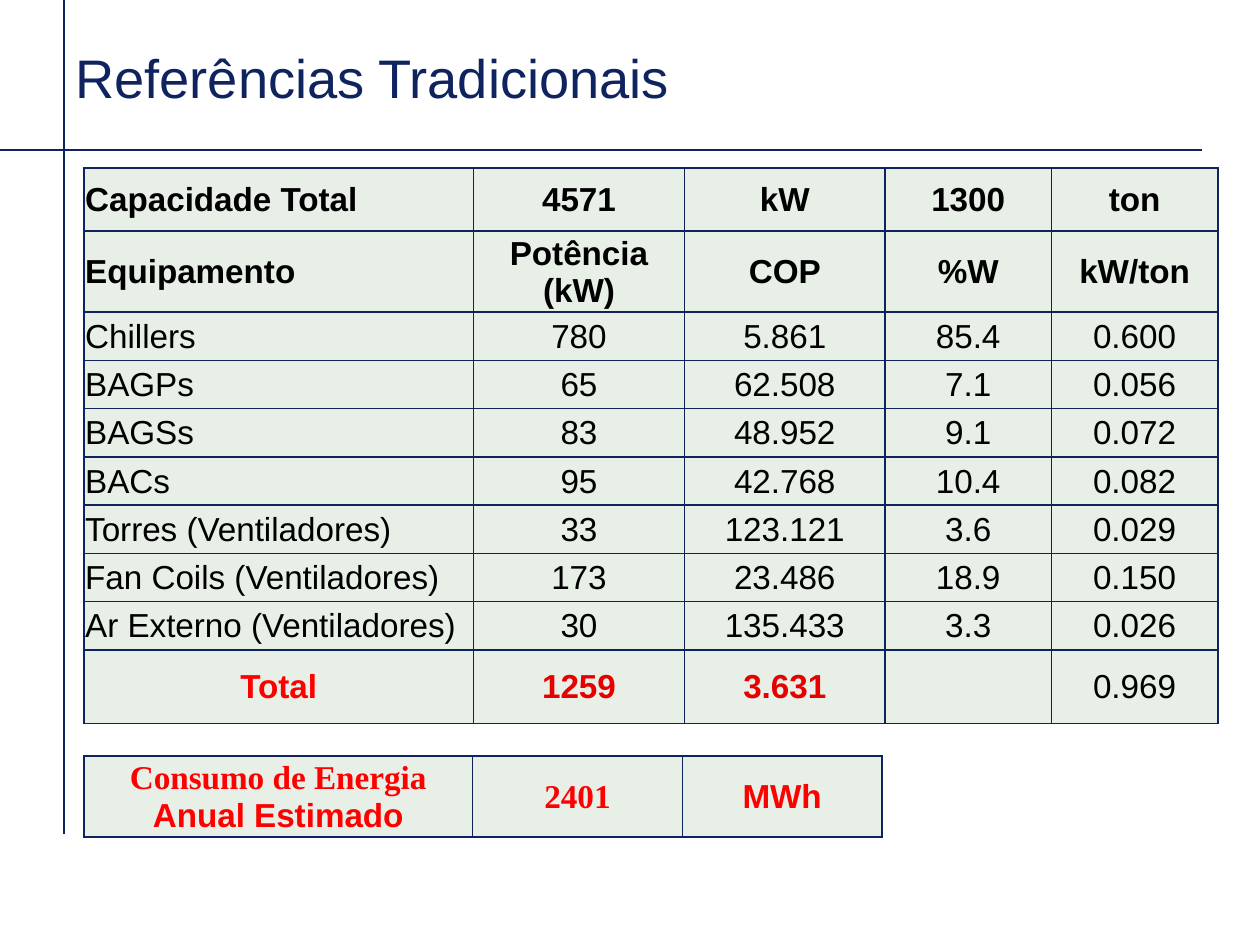
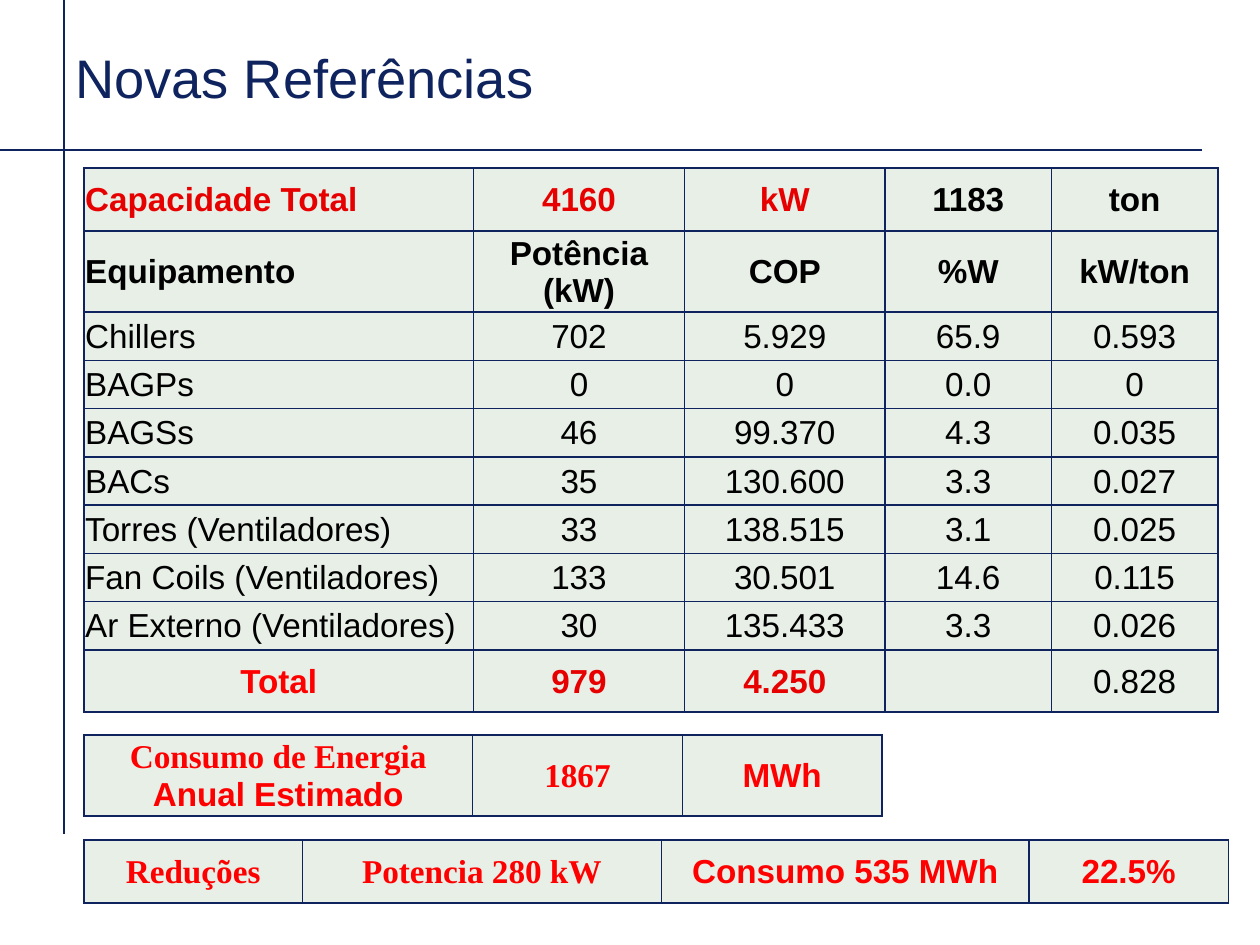
import dataclasses
import itertools

import pptx
import pptx.dml.color
import pptx.enum.shapes
import pptx.enum.text
import pptx.oxml
import pptx.oxml.ns
import pptx.util

NAVY, MINT, BLACK = "0F245F", "E7EFE7", "000000"
RED, DARK_RED = "FF0000", "E70000"
SANS, SERIF = "Arial", "Times New Roman"
ALIGN = pptx.enum.text.PP_ALIGN
ANCHOR = pptx.enum.text.MSO_ANCHOR


def color(hex_string):
    return pptx.dml.color.RGBColor.from_string(hex_string)


def grid(units):
    """Length of grid units; the slide has 120 columns and 90 rows."""
    return pptx.util.Inches(units / 12)


@dataclasses.dataclass
class Cell:
    text: str
    color: str = BLACK
    bold: bool = False
    fonts: tuple = (SANS,)
    align: int = ALIGN.CENTER


class Deck:
    text_size = 19
    title_size = 31
    rule_width = 0.75
    border_width = 1

    def __init__(self):
        self.presentation = pptx.Presentation()
        self.presentation.slide_width = grid(120)
        self.presentation.slide_height = grid(90)
        self.slide = None

    def add_slide(self, title):
        layout = self.presentation.slide_layouts[6]
        self.slide = self.presentation.slides.add_slide(layout)
        self.rule(6.1, 79.4, 6.1, 0)
        self.rule(0, 14.3, 114.5, 14.3)
        self.title(title)

    def rule(self, *ends):
        connector = self.slide.shapes.add_connector(
            pptx.enum.shapes.MSO_CONNECTOR.STRAIGHT, *map(grid, ends))
        connector.line.color.rgb = color(NAVY)
        connector.line.width = pptx.util.Pt(self.rule_width)
        properties = connector._element.spPr
        properties.append(pptx.oxml.parse_xml(
            f'<a:effectLst {pptx.oxml.ns.nsdecls("a")}/>'))

    def title(self, text):
        box = self.slide.shapes.add_textbox(*map(grid, (6, 3, 91, 8)))
        frame = box.text_frame
        frame.word_wrap = True
        frame.vertical_anchor = ANCHOR.BOTTOM
        frame.text = text
        paragraph = frame.paragraphs[0]
        paragraph.line_spacing = 0.85
        self.format_runs(paragraph, SANS, self.title_size, NAVY, False)

    def format_runs(self, paragraph, font_name, size, hex_string, bold):
        for run in paragraph.runs:
            run.font.name = font_name
            run.font.size = pptx.util.Pt(size)
            run.font.color.rgb = color(hex_string)
            run.font.bold = bold

    def table(self, top, column_widths, row_heights, rows):
        frame = self.slide.shapes.add_table(
            len(rows), len(column_widths), grid(8), grid(top),
            grid(sum(column_widths)), grid(sum(row_heights)))
        table = frame.table
        table.first_row = table.horz_banding = False
        for column, width in zip(table.columns, column_widths):
            column.width = grid(width)
        for table_row, height, row in zip(table.rows, row_heights, rows):
            table_row.height = grid(height)
            for table_cell, cell in zip(table_row.cells, row):
                self.fill_cell(table_cell, cell)

    def fill_cell(self, table_cell, cell):
        inset = pptx.util.Inches(0.01)
        table_cell.margin_left = table_cell.margin_right = inset
        table_cell.margin_top, table_cell.margin_bottom = inset, 0
        table_cell.vertical_anchor = ANCHOR.MIDDLE
        table_cell.fill.solid()
        table_cell.fill.fore_color.rgb = color(MINT)
        self.border(table_cell)
        table_cell.text_frame.text = cell.text
        paragraphs = table_cell.text_frame.paragraphs
        for paragraph, font_name in zip(paragraphs, itertools.cycle(cell.fonts)):
            paragraph.alignment = cell.align
            self.format_runs(paragraph, font_name, self.text_size,
                             cell.color, cell.bold)

    def border(self, table_cell):
        properties = table_cell._tc.get_or_add_tcPr()
        width = pptx.util.Pt(self.border_width)
        for position, side in enumerate("LRTB"):
            properties.insert(position, pptx.oxml.parse_xml(
                f'<a:ln{side} {pptx.oxml.ns.nsdecls("a")} w="{width}">'
                f'<a:solidFill><a:srgbClr val="{NAVY}"/></a:solidFill>'
                f'</a:ln{side}>'))


# Tables of the subject
EQUIPMENT = ["Chillers", "BAGPs", "BAGSs", "BACs", "Torres (Ventiladores)",
             "Fan Coils (Ventiladores)", "Ar Externo (Ventiladores)"]
HEADINGS = ["Equipamento", "Potência\n(kW)", "COP", "%W", "kW/ton"]


def labelled_row(label, values, bold=False):
    return [Cell(label, bold=bold, align=ALIGN.LEFT),
            *(Cell(value, bold=bold) for value in values)]


def equipment_table(deck, capacity, capacity_color, measures, total, total_height):
    capacity_row = labelled_row("Capacidade Total", capacity, bold=True)
    for cell in capacity_row[:3]:
        cell.color = capacity_color
    power, cop, power_per_ton = total
    total_row = [Cell("Total", RED, True), Cell(power, DARK_RED, True),
                 Cell(cop, DARK_RED, True), Cell(""), Cell(power_per_ton)]
    rows = [capacity_row, labelled_row(HEADINGS[0], HEADINGS[1:], bold=True),
            *map(labelled_row, EQUIPMENT, measures), total_row]
    heights = [6, 7.15, *[4.6] * len(EQUIPMENT), total_height]
    deck.table(16, [37.1, 20.1, 19.1, 15.85, 15.85], heights, rows)


def consumption_table(deck, top, energy):
    deck.table(top, [37, 20, 19], [7.65], [[
        Cell("Consumo de Energia\nAnual Estimado", RED, True, (SERIF, SANS)),
        Cell(energy, RED, True, (SERIF,)),
        Cell("MWh", RED, True)]])


def main():
    deck = Deck()

    # Traditional references
    deck.add_slide("Referências Tradicionais")
    equipment_table(deck, ["4571", "kW", "1300", "ton"], BLACK, [
        ["780", "5.861", "85.4", "0.600"],
        ["65", "62.508", "7.1", "0.056"],
        ["83", "48.952", "9.1", "0.072"],
        ["95", "42.768", "10.4", "0.082"],
        ["33", "123.121", "3.6", "0.029"],
        ["173", "23.486", "18.9", "0.150"],
        ["30", "135.433", "3.3", "0.026"],
    ], ["1259", "3.631", "0.969"], 7)
    consumption_table(deck, 72, "2401")

    # New references
    deck.add_slide("Novas Referências")
    equipment_table(deck, ["4160", "kW", "1183", "ton"], DARK_RED, [
        ["702", "5.929", "65.9", "0.593"],
        ["0", "0", "0.0", "0"],
        ["46", "99.370", "4.3", "0.035"],
        ["35", "130.600", "3.3", "0.027"],
        ["33", "138.515", "3.1", "0.025"],
        ["133", "30.501", "14.6", "0.115"],
        ["30", "135.433", "3.3", "0.026"],
    ], ["979", "4.250", "0.828"], 5.9)
    consumption_table(deck, 70, "1867")

    # Reductions achieved
    deck.table(80, [20.8, 34.2, 35, 19], [6], [[
        Cell("Reduções", RED, True, (SERIF,)),
        Cell("Potencia 280 kW", RED, True, (SERIF,)),
        Cell("Consumo 535 MWh", RED, True),
        Cell("22.5%", RED, True)]])

    deck.presentation.save("out.pptx")


if __name__ == "__main__":
    main()
